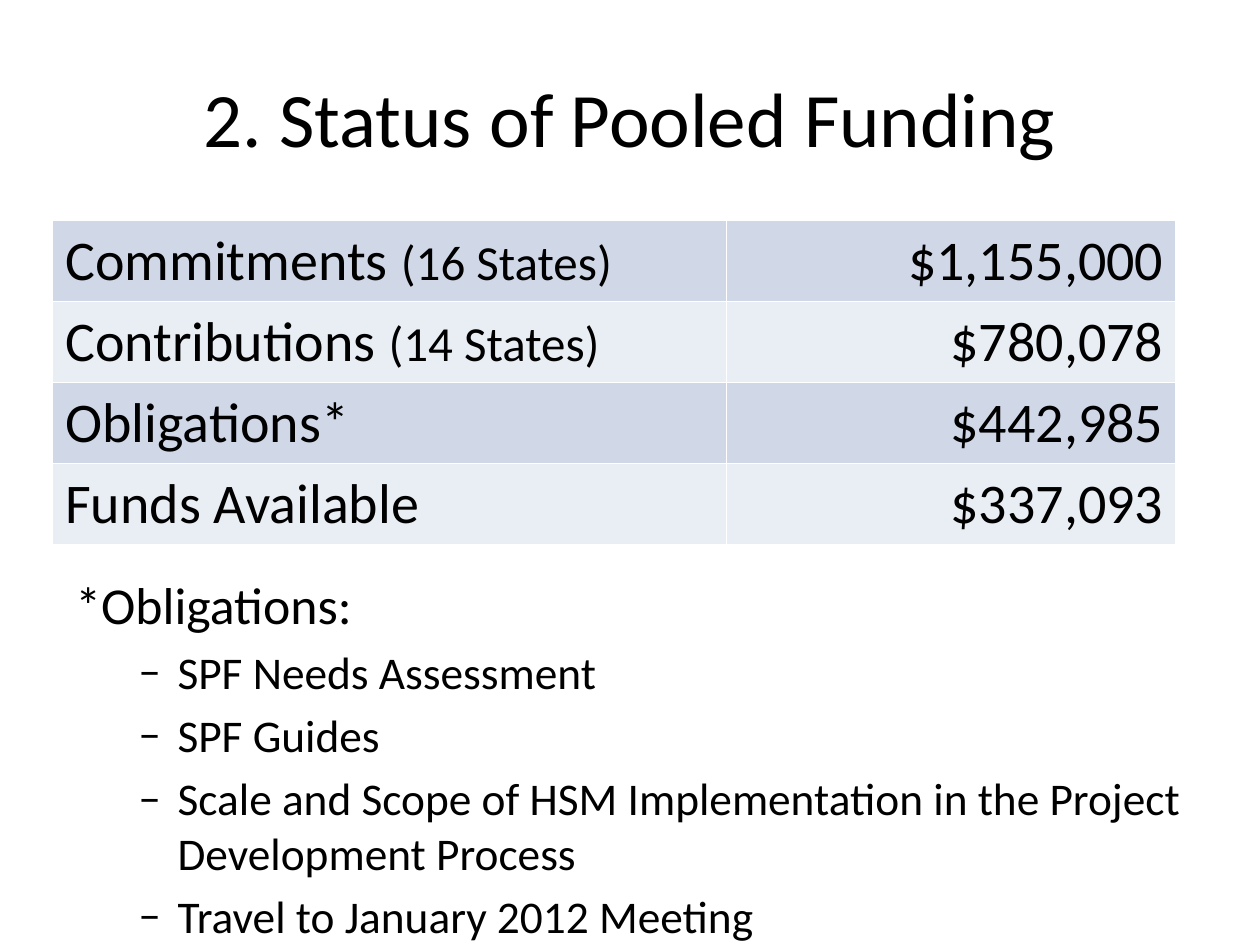
from lxml.etree import SubElement as Sub
from pptx import Presentation
from pptx.dml.color import RGBColor
from pptx.enum.text import MSO_ANCHOR as Anchor, PP_ALIGN as Align
from pptx.oxml.ns import qn
from pptx.util import Cm, Pt

BLACK = RGBColor(0x00, 0x00, 0x00)
WHITE = RGBColor(0xFF, 0xFF, 0xFF)
BLUE = RGBColor(0xD0, 0xD8, 0xE8)
PALE = RGBColor(0xE9, 0xED, 0xF4)

FUNDS = [
    ("Commitments ", "(16 States)", "$1,155,000"),
    ("Contributions ", "(14 States)", "$780,078"),
    ("Obligations*", "", "$442,985"),
    ("Funds Available", "", "$337,093"),
]
ITEMS = [
    "SPF Needs Assessment",
    "SPF Guides",
    "Scale and Scope of HSM Implementation in the Project Development Process",
    "Travel to January 2012 Meeting",
]


def style(obj, form):
    for name, value in form.items():
        setattr(obj, name, value)


def write(para, text, size, **form):
    run = para.add_run()
    run.text = text
    style(run.font, {"name": "Calibri", "size": Pt(size)})
    run.font.color.rgb = BLACK
    style(para, form)


def add_box(slide, box, anchor):
    frame = slide.shapes.add_textbox(*map(Cm, box)).text_frame
    style(frame, {"word_wrap": True, "vertical_anchor": anchor})
    return frame


def add_title(slide, box):
    frame = add_box(slide, box, Anchor.MIDDLE)
    write(frame.paragraphs[0], "2. Status of Pooled Funding", 44, alignment=Align.CENTER)


def add_dash(para):
    props = para._p.get_or_add_pPr()
    props.set("marL", str(Cm(2.06)))
    props.set("indent", str(Cm(-0.79)))
    Sub(props, qn("a:buFont"), typeface="Calibri")
    Sub(props, qn("a:buChar"), char="–")


def add_notes(slide, box):
    frame = add_box(slide, box, Anchor.TOP)
    write(frame.paragraphs[0], "*Obligations:", 29.6, space_before=Pt(6))
    for item in ITEMS:
        para = frame.add_paragraph()
        write(para, item, 25.9, space_before=Pt(5))
        add_dash(para)


def add_edges(cell):
    props = cell._tc.get_or_add_tcPr()
    for side in "LRTB":
        line = Sub(props, qn(f"a:ln{side}"), w=str(Pt(1)))
        Sub(Sub(line, qn("a:solidFill")), qn("a:srgbClr"), val=str(WHITE))


def add_funds(slide, box):
    grid = slide.shapes.add_table(len(FUNDS), 2, *map(Cm, box)).table
    style(grid, {"first_row": False, "horz_banding": False})
    for col, share in zip(grid.columns, (0.6, 0.4)):
        col.width = Cm(box[2] * share)
    for i, (label, note, sum_) in enumerate(FUNDS):
        left, right = grid.rows[i].cells
        for cell in (left, right):
            add_edges(cell)
            cell.fill.solid()
            cell.fill.fore_color.rgb = PALE if i % 2 else BLUE
        para = left.text_frame.paragraphs[0]
        write(para, label, 32)
        if note:
            write(para, note, 28)
        write(right.text_frame.paragraphs[0], sum_, 32, alignment=Align.RIGHT)


def main():
    deck = Presentation()
    style(deck, {"slide_width": Cm(25.4), "slide_height": Cm(19.05)})
    slide = deck.slides.add_slide(deck.slide_layouts[6])
    add_title(slide, (1.27, 0.76, 22.86, 3.18))
    add_notes(slide, (1.27, 11.43, 22.86, 7.42))
    add_funds(slide, (1.06, 4.45, 22.65, 6.53))
    deck.save("out.pptx")


if __name__ == "__main__":
    main()
